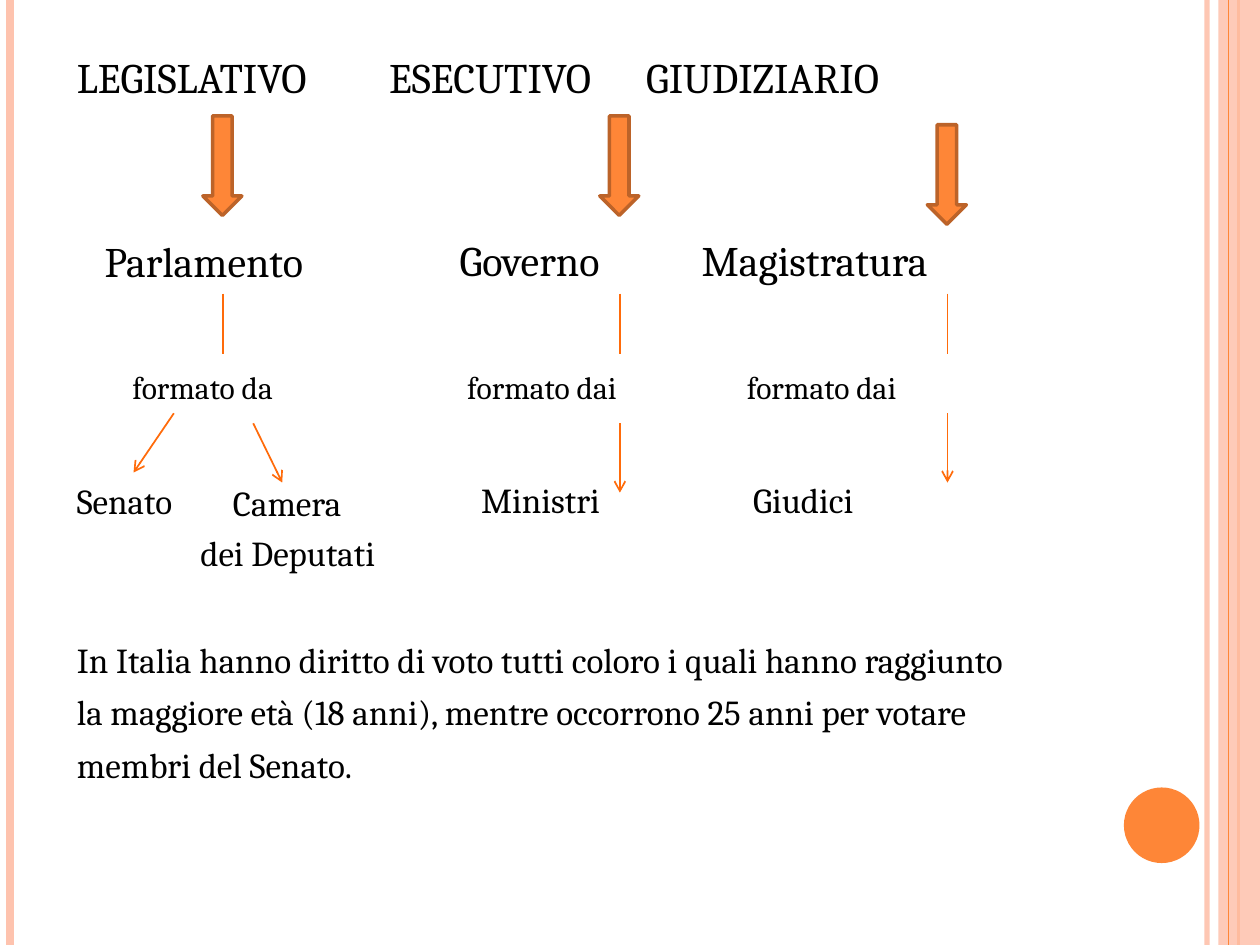
from lxml.etree import SubElement
from pptx import Presentation
from pptx.dml.color import RGBColor
from pptx.enum.shapes import MSO_CONNECTOR, MSO_SHAPE
from pptx.enum.text import MSO_ANCHOR, MSO_AUTO_SIZE
from pptx.oxml.ns import qn
from pptx.util import Inches, Pt

ORANGE, DARK_ORANGE, LINE_ORANGE, PEACH = "FE8637", "BC6329", "FF6B0A", "FEC3AE"
BLACK = "000000"
# Size and space before of the rows shared by all columns: power, body, link, members
ROW_FORMATS = [(24, 6), (24, 76), (18, 47), (20, 42)]


def color(hex_value):
    return RGBColor.from_string(hex_value)


def set_opacity(fill_parent, percent):
    rgb = next(fill_parent.iter(qn("a:srgbClr")))
    SubElement(rgb, qn("a:alpha"), val=str(percent * 1000))


def add_line(slide, start, end, line_color=LINE_ORANGE, width=1, arrow=False, opacity=100):
    connector = slide.shapes.add_connector(
        MSO_CONNECTOR.STRAIGHT, *map(Inches, (*start, *end)))
    connector.line.color.rgb = color(line_color)
    connector.line.width = Pt(width)
    properties = connector._element.spPr
    line = properties.find(qn("a:ln"))
    if opacity < 100:
        set_opacity(line, opacity)
    if arrow:
        SubElement(line, qn("a:tailEnd"), type="arrow")
    SubElement(properties, qn("a:effectLst"))


def add_shape(slide, kind, box, fill, line_color=None, width=2, opacity=100):
    shape = slide.shapes.add_shape(kind, *map(Inches, box))
    shape.shadow.inherit = False
    shape.fill.solid()
    shape.fill.fore_color.rgb = color(fill)
    if opacity < 100:
        set_opacity(shape._element.spPr, opacity)
    if line_color:
        shape.line.color.rgb = color(line_color)
        shape.line.width = Pt(width)
    else:
        shape.line.fill.background()


def write_text(paragraph, text, size=20, space_before=6, indent=0, font="Cambria",
               text_color=BLACK):
    """Write an unbulleted paragraph, indented by a length in inches."""
    paragraph.space_before = Pt(space_before)
    run = paragraph.add_run()
    run.text = text
    run.font.name = font
    run.font.size = Pt(size)
    run.font.color.rgb = color(text_color)
    properties = paragraph._p.get_or_add_pPr()
    properties.set("marL", str(Inches(indent)))
    properties.set("indent", "0")
    SubElement(properties, qn("a:buNone"))


def write_rows(shape, rows):
    """Fill a shape with rows of text, size, space before and indent."""
    frame = shape.text_frame
    frame.word_wrap = True
    frame.auto_size = MSO_AUTO_SIZE.NONE
    frame.vertical_anchor = MSO_ANCHOR.TOP
    for index, (text, size, space_before, indent) in enumerate(rows):
        paragraph = frame.add_paragraph() if index else frame.paragraphs[0]
        write_text(paragraph, text, size=size, space_before=space_before, indent=indent)


def column_rows(labels):
    return [(text, size, space_before, indent)
            for (text, indent), (size, space_before) in zip(labels, ROW_FORMATS)]


def add_text_box(slide, box, rows):
    write_rows(slide.shapes.add_textbox(*map(Inches, box)), rows)


def add_frame(slide, left, top, width, height):
    """Draw the vertical stripes and the disc that frame the page."""
    right, bottom = left + width, top + height

    def add_stripe(x, stripe_color, stripe_width, opacity=100):
        add_line(slide, (x, top), (x, bottom), stripe_color, stripe_width, opacity=opacity)

    add_stripe(right - 0.42, PEACH, 3, 93)
    add_stripe(left + 0.08, PEACH, 4.5)
    add_stripe(right - 0.17, ORANGE, 1.5)
    add_shape(slide, MSO_SHAPE.RECTANGLE, (right - 0.33, top, 0.33, height), PEACH, opacity=87)
    add_stripe(right - 0.25, ORANGE, 0.75)
    add_shape(slide, MSO_SHAPE.OVAL, (right - 1.08, bottom - 1.25, 0.6, 0.6), ORANGE)


def add_texts(slide, left, top, width, height):
    """Place the first column and the closing text in the body, the rest beside it."""
    body = slide.placeholders[1]
    body.left, body.top, body.width, body.height = map(Inches, (left, top, width, height))
    legislative = [("LEGISLATIVO", 0), ("Parlamento", 0.22), ("formato da", 0.44), ("Senato", 0)]
    write_rows(body, column_rows(legislative) + [
        ("dei Deputati", 20, 6, 0.98),
        ("In Italia hanno diritto di voto tutti coloro i quali hanno raggiunto", 20, 37, 0),
        ("la maggiore età (18 anni), mentre occorrono 25 anni per votare", 20, 6, 0),
        ("membri del Senato.", 20, 6, 0),
    ])
    executive = [("ESECUTIVO", 0), ("Governo", 0.56), ("formato dai", 0.62), ("Ministri", 0.73)]
    judicial = [("GIUDIZIARIO", 0), ("Magistratura", 0.44), ("formato dai", 0.8),
                ("Giudici", 0.85)]
    add_text_box(slide, (left + 2.48, top, 2.1, 3.9), column_rows(executive))
    add_text_box(slide, (left + 4.52, top, 2.6, 3.9), column_rows(judicial))
    add_text_box(slide, (left + 1.24, top + 3.41, 1.3, 0.45), [("Camera", 20, 0, 0)])


def add_branch(slide, center, top, arrows):
    """Draw one power's block arrow, its stem and the thin arrows below it."""
    add_shape(slide, MSO_SHAPE.DOWN_ARROW, (center - 0.16, top, 0.31, 0.79),
              ORANGE, DARK_ORANGE)
    add_line(slide, (center, 2.33), (center, 2.81))
    for start, end in arrows:
        add_line(slide, start, end, arrow=True)


def main():
    presentation = Presentation()
    presentation.slide_width, presentation.slide_height = Inches(10), Inches(7.5)
    slide = presentation.slides.add_slide(presentation.slide_layouts[1])
    title = slide.shapes.title
    title._element.getparent().remove(title._element)

    add_frame(slide, 0, 0, 10, 7.5)
    add_texts(slide, 0.51, 0.36, 8.74, 6.14)
    branches = [
        (1.77, 0.92, [((1.38, 3.28), (1.06, 3.75)), ((2.01, 3.36), (2.24, 3.83))]),
        (4.92, 0.92, [((4.92, 3.36), (4.92, 3.91))]),
        (7.52, 0.99, [((7.52, 3.28), (7.52, 3.83))]),
    ]
    for center, top, arrows in branches:
        add_branch(slide, center, top, arrows)
    presentation.save("out.pptx")


if __name__ == "__main__":
    main()
